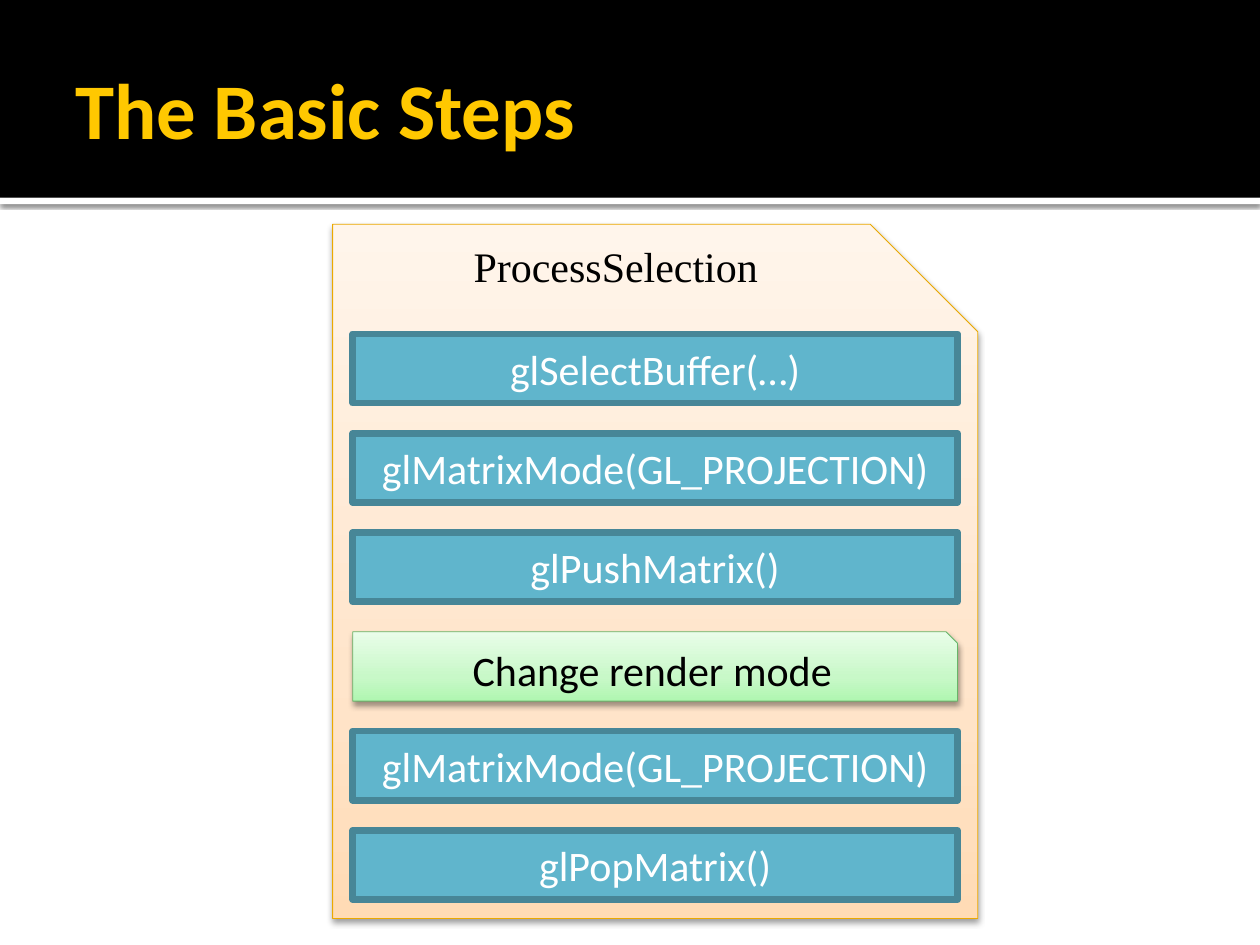
from dataclasses import dataclass
from typing import Optional

from lxml import etree
from pptx import Presentation
from pptx.dml.color import RGBColor
from pptx.enum import shapes, text
from pptx.oxml import ns
from pptx.util import Inches, Pt


@dataclass(frozen=True)
class Shadow:
    opacity: int
    blur: float
    distance: float


@dataclass(frozen=True)
class Font:
    name: str
    size: int
    color: str
    bold: bool = False


@dataclass(frozen=True)
class Style:
    kind: shapes.MSO_SHAPE
    colors: tuple[str, ...]
    line: Optional[str] = None
    line_width: float = 0
    shadow: Optional[Shadow] = None
    font: Optional[Font] = None


@dataclass(frozen=True)
class Box:
    left: float
    top: float
    width: float
    height: float

    def lengths(self) -> tuple[int, ...]:
        return tuple(map(Inches, (self.left, self.top, self.width, self.height)))


@dataclass(frozen=True)
class Step:
    label: str
    style: Style


class Theme:
    title = Font("Calibri", 45, "FFC800", True)
    caption = Font("Times New Roman", 24, "000000")
    raised = Shadow(38, 3.5, 2)
    rule = Style(shapes.MSO_SHAPE.RECTANGLE, ("FFFFFF",), shadow=Shadow(60, 2.5, 0.8))
    banner = Style(shapes.MSO_SHAPE.RECTANGLE, ("000000",))
    panel = Style(shapes.MSO_SHAPE.SNIP_1_RECTANGLE, ("FFDBB5", "FFE5CB", "FFF5EB"),
                  "EBA900", 0.5, raised)
    call = Style(shapes.MSO_SHAPE.RECTANGLE, ("60B5CC",), "478697", 3.78,
                 font=Font("Calibri", 24, "FFFFFF"))
    stage = Style(shapes.MSO_SHAPE.SNIP_1_RECTANGLE, ("B0F6B1", "C8F8C8", "E9FDE9"),
                  "67B569", 0.5, raised, Font("Calibri", 24, "000000"))
    gradient_stops = (0, 35, 100)


STEPS = (
    Step("glSelectBuffer(…)", Theme.call),
    Step("glMatrixMode(GL_PROJECTION)", Theme.call),
    Step("glPushMatrix()", Theme.call),
    Step("Change render mode", Theme.stage),
    Step("glMatrixMode(GL_PROJECTION)", Theme.call),
    Step("glPopMatrix()", Theme.call),
)
FIRST_STEP = Box(2.8, 2.65, 4.8, 0.55)
LAST_STEP_TOP = 6.59


def add_element(parent, tag: str, **attributes):
    values = {name: str(value) for name, value in attributes.items()}
    return etree.SubElement(parent, ns.qn(tag), values)


def fill_shape(shape, colors: tuple[str, ...]) -> None:
    if len(colors) == 1:
        shape.fill.solid()
        shape.fill.fore_color.rgb = RGBColor.from_string(colors[0])
        return
    shape.fill.gradient()
    shape.fill.gradient_angle = 90
    stops = shape.element.spPr.find(".//" + ns.qn("a:gsLst"))
    for stop in list(stops):
        stops.remove(stop)
    for position, color in zip(Theme.gradient_stops, colors):
        stop = add_element(stops, "a:gs", pos=position * 1000)
        add_element(stop, "a:srgbClr", val=color)


def add_shadow(shape, shadow: Shadow) -> None:
    effects = shape.element.spPr.find(ns.qn("a:effectLst"))
    outer = add_element(effects, "a:outerShdw", blurRad=Pt(shadow.blur),
                        dist=Pt(shadow.distance), dir=90 * 60000, rotWithShape=0)
    color = add_element(outer, "a:srgbClr", val="000000")
    add_element(color, "a:alpha", val=shadow.opacity * 1000)


def write_text(frame, content: str, font: Font) -> None:
    frame.text = content
    for run in frame.paragraphs[0].runs:
        run.font.name = font.name
        run.font.size = Pt(font.size)
        run.font.bold = font.bold
        run.font.color.rgb = RGBColor.from_string(font.color)


def draw_shape(slide, box: Box, style: Style, label: str = "") -> None:
    shape = slide.shapes.add_shape(style.kind, *box.lengths())
    fill_shape(shape, style.colors)
    if style.line:
        shape.line.color.rgb = RGBColor.from_string(style.line)
        shape.line.width = Pt(style.line_width)
    else:
        shape.line.fill.background()
    shape.shadow.inherit = False
    if style.shadow:
        add_shadow(shape, style.shadow)
    if label and style.font:
        write_text(shape.text_frame, label, style.font)
        shape.text_frame.vertical_anchor = text.MSO_ANCHOR.MIDDLE
        shape.text_frame.paragraphs[0].alignment = text.PP_ALIGN.CENTER


def draw_text(slide, box: Box, content: str, font: Font, wrap: bool):
    frame = slide.shapes.add_textbox(*box.lengths()).text_frame
    write_text(frame, content, font)
    frame.word_wrap = wrap
    return frame


def main() -> None:
    presentation = Presentation()
    presentation.slide_width = Inches(10)
    presentation.slide_height = Inches(7.5)
    slide = presentation.slides.add_slide(presentation.slide_layouts[6])

    draw_shape(slide, Box(0, 1.57, 10, 0.05), Theme.rule)
    draw_shape(slide, Box(0, 0, 10, 1.57), Theme.banner)
    title = draw_text(slide, Box(0.5, 0.17, 9, 1.37), "The Basic Steps", Theme.title, True)
    title.vertical_anchor = text.MSO_ANCHOR.MIDDLE
    title.margin_right = Inches(0.05)

    draw_shape(slide, Box(2.64, 1.78, 5.12, 5.51), Theme.panel)
    caption = draw_text(slide, Box(3.66, 1.86, 2.48, 0.51), "ProcessSelection",
                        Theme.caption, False)
    caption.auto_size = text.MSO_AUTO_SIZE.SHAPE_TO_FIT_TEXT

    pitch = (LAST_STEP_TOP - FIRST_STEP.top) / (len(STEPS) - 1)
    for index, step in enumerate(STEPS):
        box = Box(FIRST_STEP.left, FIRST_STEP.top + index * pitch,
                  FIRST_STEP.width, FIRST_STEP.height)
        draw_shape(slide, box, step.style, step.label)

    presentation.save("out.pptx")


if __name__ == "__main__":
    main()
